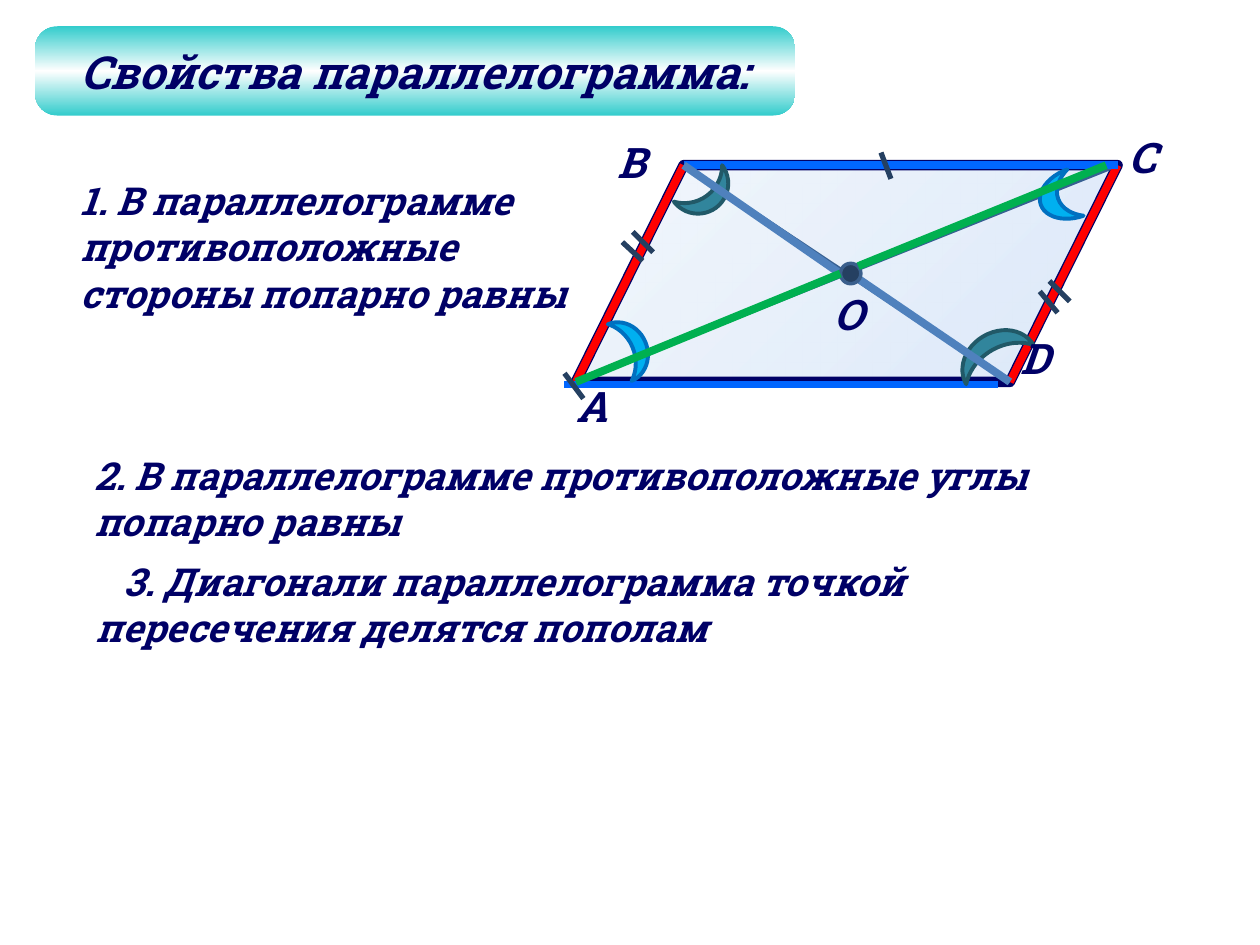
import pptx
import pptx.dml.color
import pptx.enum.shapes
import pptx.enum.text
import pptx.oxml
import pptx.oxml.ns
import pptx.util
from lxml import etree

Cm = pptx.util.Cm
Pt = pptx.util.Pt
MSO_SHAPE = pptx.enum.shapes.MSO_SHAPE
qn = pptx.oxml.ns.qn

FONT = "Roboto Slab"
COLORS = {
    "navy": "000066", "red": "FF0000", "blue": "0066FF", "green": "00B050",
    "steel": "4F81BD", "thin": "376092", "tick": "254061", "ring": "3A5F8C",
    "teal": "31859C", "teal_edge": "215968", "sky": "00B0F0", "sky_edge": "0070C0",
    "aqua": "33CCCC", "white": "FFFFFF",
    "pale_1": "CCDEF6", "pale_2": "DEEAF9", "pale_3": "EEF4FC",
}


def rgb(name):
    return pptx.dml.color.RGBColor.from_string(COLORS[name])


def style_text(paragraph, size):
    font = paragraph.font
    font.name, font.size = FONT, Pt(size)
    font.bold = font.italic = True
    font.color.rgb = rgb("navy")


def add_text(slide, box, text, size, indent=0):
    left, top, width, height = box
    shape = slide.shapes.add_textbox(Cm(left), Cm(top), Cm(width), Cm(height))
    shape.text_frame.word_wrap = True
    paragraph = shape.text_frame.paragraphs[0]
    paragraph.text = text
    if indent:
        paragraph._p.get_or_add_pPr().set("indent", str(Cm(indent)))
    style_text(paragraph, size)


def add_shape(slide, kind, box, fill=None, edge=None, weight=0):
    left, top, width, height = box
    shape = slide.shapes.add_shape(kind, Cm(left), Cm(top), Cm(width), Cm(height))
    shape.shadow.inherit = False
    if fill:
        shape.fill.solid()
        shape.fill.fore_color.rgb = rgb(fill)
    if edge:
        shape.line.color.rgb = rgb(edge)
        shape.line.width = Pt(weight)
    else:
        shape.line.fill.background()
    return shape


def set_gradient(shape, names, angle, opacity=100):
    """Spread the named colours evenly along a clockwise angle."""
    shape.fill.gradient()
    shape.fill.gradient_angle = 360 - angle
    stops = shape._element.spPr.find(qn("a:gradFill")).find(qn("a:gsLst"))
    for stop in list(stops):
        stops.remove(stop)
    for index, name in enumerate(names):
        position = index * 100000 // (len(names) - 1)
        stop = etree.SubElement(stops, qn("a:gs"), pos=str(position))
        color = etree.SubElement(stop, qn("a:srgbClr"), val=COLORS[name])
        if opacity < 100:
            etree.SubElement(color, qn("a:alpha"), val=str(opacity * 1000))


def add_line(slide, start, end, color, weight):
    line = slide.shapes.add_connector(
        pptx.enum.shapes.MSO_CONNECTOR.STRAIGHT,
        Cm(start[0]), Cm(start[1]), Cm(end[0]), Cm(end[1]))
    line.line.color.rgb = rgb(color)
    line.line.width = Pt(weight)
    etree.SubElement(line._element.spPr, qn("a:effectLst"))


def add_title(slide, box):
    banner = add_shape(slide, MSO_SHAPE.ROUNDED_RECTANGLE, box)
    banner.adjustments[0] = 0.25
    set_gradient(banner, ["aqua", "white", "aqua"], 90)
    frame = banner.text_frame
    frame.word_wrap = False
    frame.vertical_anchor = pptx.enum.text.MSO_ANCHOR.MIDDLE
    paragraph = frame.paragraphs[0]
    paragraph.text = "Свойства параллелограмма:"
    paragraph.alignment = pptx.enum.text.PP_ALIGN.CENTER
    style_text(paragraph, 26)


def add_parallelogram(slide, box):
    """Draw the figure with sides, angles, diagonals, ticks and vertex labels."""
    left, top, width, height = box
    slant = 0.497

    def at(x, y):
        return left + x, top + y

    a, b = at(0, height), at(slant * height, 0)
    c, d = at(width, 0), at(width - slant * height, height)
    middle_x, middle_y = width / 2, height / 2

    body = add_shape(slide, MSO_SHAPE.PARALLELOGRAM, box, edge="navy", weight=6)
    body.adjustments[0] = slant
    set_gradient(body, ["pale_1", "pale_2", "pale_3"], 225, 71)

    base_shift = -0.23, 0.05
    base = [(x + base_shift[0], y + base_shift[1]) for x, y in (a, d)]
    for start, end, color, weight in [
            (b, d, "thin", 2.25), (a, c, "thin", 2.25),
            (b, a, "red", 4.5), (c, d, "red", 4.5),
            (b, c, "blue", 4.5), (*base, "blue", 4.5)]:
        add_line(slide, start, end, color, weight)

    for x, y, moon_width, moon_height, rotation, color in [
            (8.05, 2.95, 0.66, 1.57, 59.7, "teal"),
            (9.35, 0.18, 0.74, 0.99, 340.6, "sky"),
            (2.34, 0, 0.61, 1.22, 233, "teal"),
            (0.86, 3.05, 0.56, 1.24, 157.3, "sky")]:
        moon = add_shape(slide, MSO_SHAPE.MOON, (*at(x, y), moon_width, moon_height),
                         color, color + "_edge", 2.25)
        moon.rotation = rotation

    for x, y, letter in [(-0.23, 4.22, "А"), (0.58, -0.71, "В"), (10.9, -0.81, "С"),
                         (8.71, 3.25, "D"), (4.95, 2.36, "O")]:
        add_text(slide, (*at(x, y), 1.19, 1.3), letter, 24)

    add_line(slide, b, at(middle_x - 0.13, middle_y), "steel", 4.5)
    add_line(slide, at(middle_x + 0.08, middle_y), d, "steel", 4.5)
    dot = 0.41
    add_shape(slide, MSO_SHAPE.OVAL,
              (*at(middle_x + 0.08 - dot / 2, middle_y - dot / 2), dot, dot),
              "tick", "ring", 2)
    add_line(slide, a, at(middle_x - 0.13, middle_y), "green", 4.5)
    add_line(slide, at(middle_x + 0.23, middle_y - 0.15), at(width - 0.23, 0),
             "green", 4.5)

    for x, y, run, rise in [
            (6.25, 0.01, 0.2, 0.53), (1.14, 1.74, 0.41, 0.38),
            (-0.04, 4.45, 0.38, 0.51), (1.35, 1.55, 0.41, 0.41),
            (9.53, 2.76, 0.36, 0.43), (9.75, 2.54, 0.41, 0.41)]:
        add_line(slide, at(x - run / 2, y - rise / 2), at(x + run / 2, y + rise / 2),
                 "tick", 3)


def add_properties(slide, left, top):
    for x, y, width, height, indent, text in [
            (0, 0, 10.41, 4.01, 0,
             "1. В параллелограмме противоположные стороны попарно равны"),
            (0.28, 5.54, 22.1, 2.13, 0,
             "2. В параллелограмме противоположные углы попарно равны"),
            (0.31, 7.67, 20.65, 2.13, 0.57,
             "3. Диагонали параллелограмма точкой пересечения делятся пополам")]:
        add_text(slide, (left + x, top + y, width, height), text, 22, indent)


def main():
    presentation = pptx.Presentation()
    presentation.slide_width, presentation.slide_height = Cm(25.4), Cm(19.05)
    slide = presentation.slides.add_slide(presentation.slide_layouts[6])
    add_parallelogram(slide, (11.61, 3.33, 10.92, 4.37))
    add_properties(slide, 1.37, 3.45)
    add_title(slide, (0.71, 0.53, 15.32, 1.8))
    presentation.save("out.pptx")


if __name__ == "__main__":
    main()
